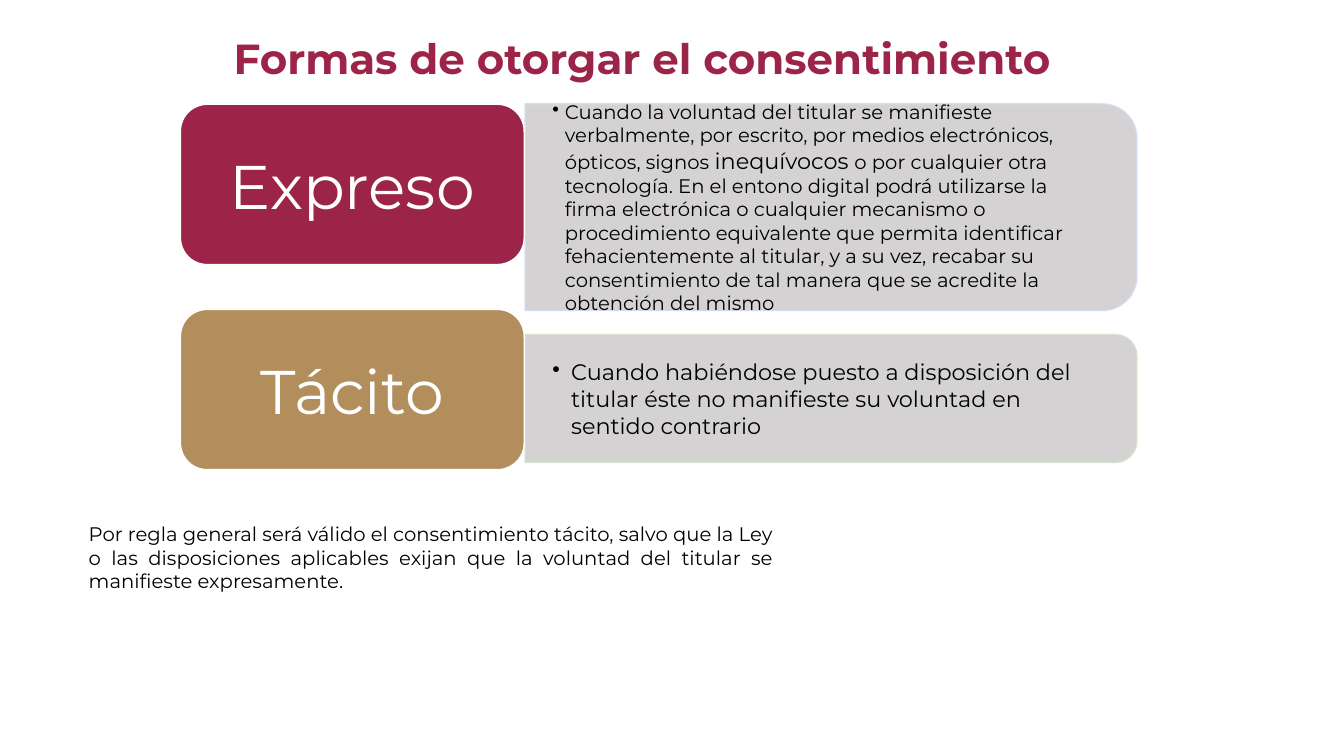
import lxml.etree
import pptx
import pptx.dml.color
import pptx.enum.shapes
import pptx.enum.text
import pptx.oxml.ns
import pptx.util

Pt = pptx.util.Pt
SHAPES = pptx.enum.shapes.MSO_SHAPE
ALIGN = pptx.enum.text.PP_ALIGN
ANCHOR = pptx.enum.text.MSO_ANCHOR

FONT = "Montserrat"
WINE, GOLD, GREY = "9D2449", "B38E5D", "D0CECE"
WHITE, BLACK = "FFFFFF", "000000"
LABEL_LEFT, LABEL_WIDTH, LABEL_HEIGHT = 128.9, 245.6, 114.5
PANEL_LEFT, PANEL_WIDTH = 375.1, 437
BOX_MARGINS = (7.2, 3.6)
LABEL_MARGINS = (13, 6.5)
PANEL_MARGINS = (19.4, 10)


def set_color(target, color):
    target.rgb = pptx.dml.color.RGBColor.from_string(color)


def apply_format(target, values):
    for name, value in values.items():
        setattr(target, name, value)


def add_child(parent, tag, **attributes):
    return lxml.etree.SubElement(parent, pptx.oxml.ns.qn(tag), attributes)


def write_text(shape, runs, color, margins, anchor, paragraph_format, bold=False, indent=0):
    horizontal, vertical = map(Pt, margins)
    frame = shape.text_frame
    apply_format(frame, {
        "word_wrap": True,
        "vertical_anchor": anchor,
        "margin_left": horizontal,
        "margin_right": horizontal,
        "margin_top": vertical,
        "margin_bottom": vertical,
    })
    paragraph = frame.paragraphs[0]
    apply_format(paragraph, paragraph_format)
    if indent:
        properties = paragraph._p.get_or_add_pPr()
        properties.set("marL", str(Pt(indent)))
        properties.set("indent", str(-Pt(indent)))
        add_child(properties, "a:buChar", char="•")
    for text, size in runs:
        run = paragraph.add_run()
        run.text = text
        apply_format(run.font, {"name": FONT, "size": Pt(size), "bold": bold})
        set_color(run.font.color, color)


def add_text(slide, bounds, runs, color=BLACK, margins=BOX_MARGINS, anchor=ANCHOR.TOP,
             paragraph_format={}, bold=False, indent=0):
    shape = slide.shapes.add_textbox(*map(Pt, bounds))
    write_text(shape, runs, color, margins, anchor, paragraph_format, bold, indent)


def add_block(slide, kind, bounds, fill, line):
    shape = slide.shapes.add_shape(kind, *map(Pt, bounds))
    shape.shadow.inherit = False
    shape.fill.solid()
    set_color(shape.fill.fore_color, fill)
    set_color(shape.line.color, line)
    shape.line.width = Pt(1)
    return shape


def add_label(slide, top, text, fill):
    bounds = (LABEL_LEFT, top, LABEL_WIDTH, LABEL_HEIGHT)
    shape = add_block(slide, SHAPES.ROUNDED_RECTANGLE, bounds, fill, WHITE)
    write_text(shape, [(text, 44)], WHITE, LABEL_MARGINS, ANCHOR.MIDDLE,
               {"alignment": ALIGN.CENTER})


def add_panel(slide, top, height, line):
    left = PANEL_LEFT + (PANEL_WIDTH - height) / 2
    turned_top = top + (height - PANEL_WIDTH) / 2
    bounds = (left, turned_top, height, PANEL_WIDTH)
    shape = add_block(slide, SHAPES.ROUND_2_SAME_RECTANGLE, bounds, GREY, line)
    shape.rotation = 90
    for color in shape._element.spPr.iter(pptx.oxml.ns.qn("a:srgbClr")):
        add_child(color, "a:alpha", val="90000")


def add_panel_text(slide, top, width, height, runs, indent):
    add_text(slide, (PANEL_LEFT, top, width, height), runs, margins=PANEL_MARGINS,
             anchor=ANCHOR.MIDDLE, indent=indent)


def main():
    presentation = pptx.Presentation()
    apply_format(presentation, {"slide_width": Pt(960), "slide_height": Pt(540)})
    slide = presentation.slides.add_slide(presentation.slide_layouts[6])

    add_text(slide, (159.8, 23, 620.6, 40.3), [("Formas de otorgar el consentimiento", 30)],
             WINE, anchor=ANCHOR.BOTTOM, paragraph_format={"line_spacing": 0.9}, bold=True)

    add_panel(slide, 74.2, 147.6, "D2DEEF")
    add_panel_text(slide, 81.4, 429.8, 133.2, [
        ("Cuando la voluntad del titular se manifieste verbalmente, por escrito, "
         "por medios electrónicos, ópticos, signos ", 14),
        ("inequívocos ", 16),
        ("o por cualquier otra tecnología. En el entono digital podrá utilizarse la firma "
         "electrónica o cualquier mecanismo o procedimiento equivalente que permita "
         "identificar fehacientemente al titular, y a su vez, recabar su consentimiento "
         "de tal manera que se acredite la obtención del mismo", 14),
    ], 9)
    add_label(slide, 74.5, "Expreso", WINE)

    add_panel(slide, 239, 91.4, "D5E3CF")
    add_panel_text(slide, 243.4, 432.7, 82.8, [
        ("Cuando habiéndose puesto a disposición del titular éste no manifieste "
         "su voluntad en sentido contrario", 16),
    ], 13.5)
    add_label(slide, 221, "Tácito", GOLD)

    add_text(slide, (56.3, 369.4, 503.3, 58.3), [
        ("Por regla general será válido el consentimiento tácito, salvo que la Ley o las "
         "disposiciones aplicables exijan que la voluntad del titular se manifieste "
         "expresamente.", 14),
    ], paragraph_format={"alignment": ALIGN.JUSTIFY})

    presentation.save("out.pptx")


if __name__ == "__main__":
    main()
